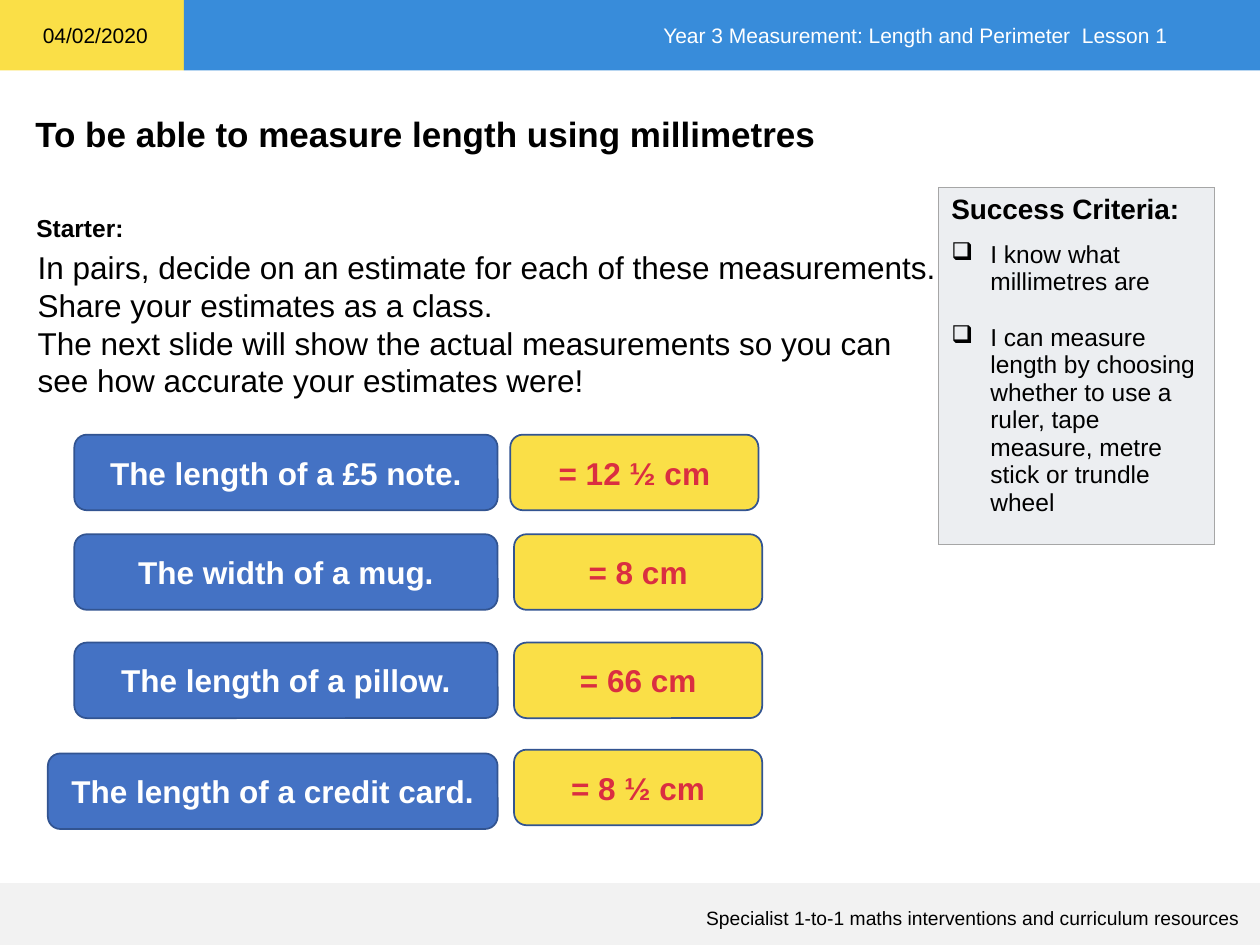
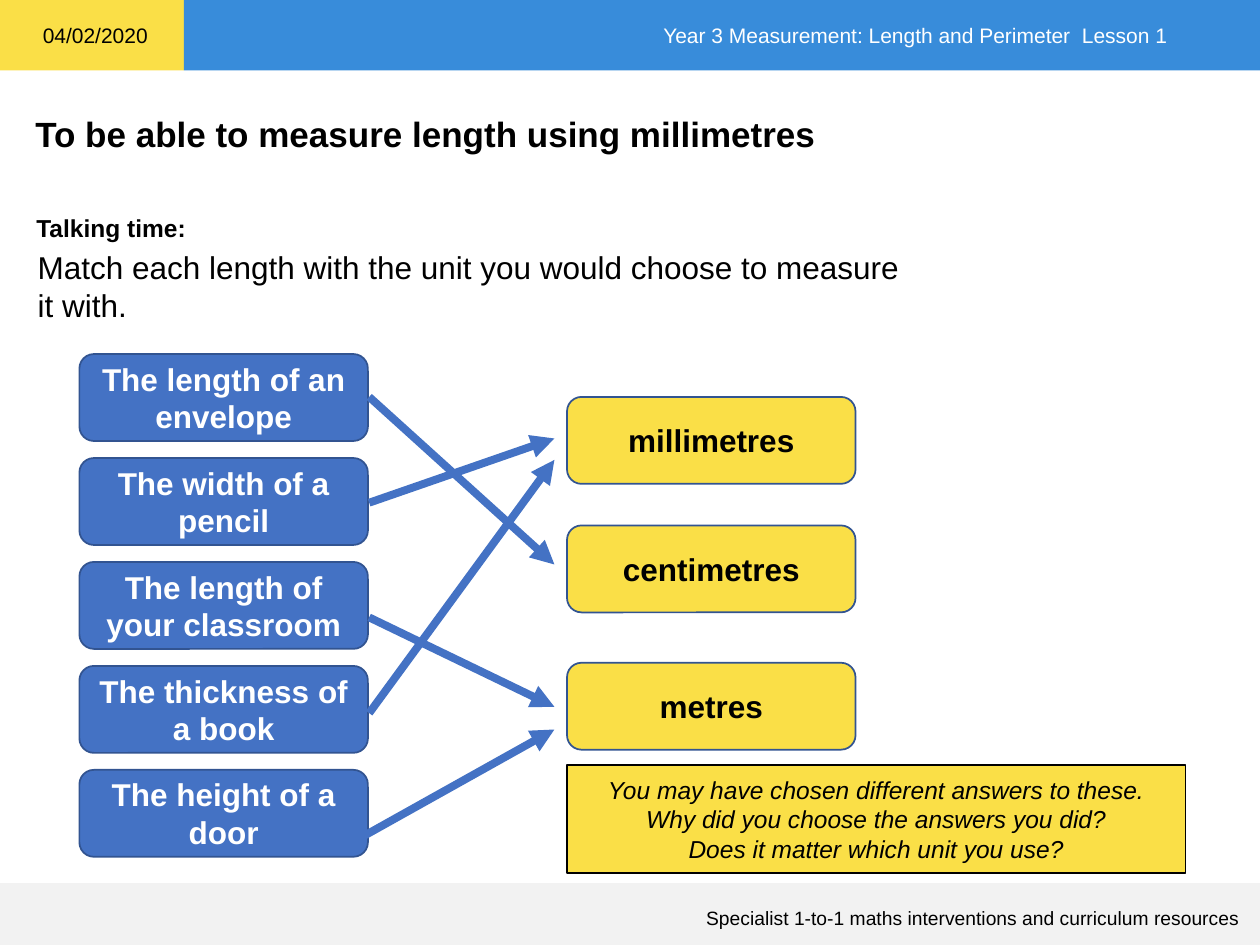
from lxml import etree
from pptx import Presentation
from pptx.dml.color import RGBColor
from pptx.enum import shapes, text
from pptx.oxml import ns
from pptx.util import Inches, Pt

COLOURS = {
    "yellow": "FADF47", "sky": "388CDA", "blue": "4472C4", "edge": "325491",
    "red": "DA2E41", "footer": "F2F2F2", "panel": "ECEEF1", "rule": "A6A6A6",
    "black": "000000", "white": "FFFFFF",
}
FONT = "Arial"
LESSON = "Year 3 Measurement: Length and Perimeter  Lesson 1"
TITLE = "To be able to measure length using millimetres"
FOOTER = "Specialist 1-to-1 maths interventions and curriculum resources"
LEFT, CENTRE, RIGHT = text.PP_ALIGN.LEFT, text.PP_ALIGN.CENTER, text.PP_ALIGN.RIGHT
MIDDLE, TOP = text.MSO_ANCHOR.MIDDLE, text.MSO_ANCHOR.TOP
RECT = shapes.MSO_SHAPE.RECTANGLE
ROUNDED = shapes.MSO_SHAPE.ROUNDED_RECTANGLE


def rgb(name):
    return RGBColor.from_string(COLOURS[name])


def inches(values):
    return [Inches(v) for v in values]


# Text
def format_run(r, size, colour="black", **styles):
    for name, value in {"name": FONT, "size": Pt(size), **styles}.items():
        setattr(r.font, name, value)
    r.font.color.rgb = rgb(colour)


def write(tf, lines, size, align=LEFT, anchor=TOP, margins=None, **styles):
    frame = {"word_wrap": True, "vertical_anchor": anchor,
             "auto_size": text.MSO_AUTO_SIZE.NONE}
    for side, value in (margins or {}).items():
        frame["margin_" + side] = Inches(value)
    for name, value in frame.items():
        setattr(tf, name, value)
    for i, line in enumerate(lines):
        p = tf.add_paragraph() if i else tf.paragraphs[0]
        p.alignment = align
        r = p.add_run()
        r.text = line
        format_run(r, size, **styles)


def add_text(s, at, lines, size, **styles):
    sp = s.shapes.add_textbox(*inches(at))
    write(sp.text_frame, lines, size, **styles)


# Shapes
def add_box(s, kind, at, fill, lines=(), size=18, line=None,
            align=CENTRE, **styles):
    sp = s.shapes.add_shape(kind, *inches(at))
    sp.shadow.inherit = False
    sp.fill.solid()
    sp.fill.fore_color.rgb = rgb(fill)
    if line:
        sp.line.color.rgb = rgb(line)
        sp.line.width = Pt(1)
    else:
        sp.line.fill.background()
    write(sp.text_frame, lines, size, align=align, anchor=MIDDLE, **styles)


def add_card(s, at, fill, label, colour):
    add_box(s, ROUNDED, at, fill, [label], line="edge", colour=colour, bold=True)


def add_arrow(s, start, end):
    cx = s.shapes.add_connector(shapes.MSO_CONNECTOR.STRAIGHT,
                                *inches(start + end))
    cx.line.color.rgb = rgb("blue")
    cx.line.width = Pt(4.5)
    etree.SubElement(cx.line._get_or_add_ln(), ns.qn("a:tailEnd"), type="triangle")
    etree.SubElement(cx._element.spPr, ns.qn("a:effectLst"))


# Success criteria table
def add_border(cell, colour, width):
    tc_pr = cell._tc.get_or_add_tcPr()
    for i, side in enumerate(("lnL", "lnR", "lnT", "lnB")):
        ln = etree.Element(ns.qn("a:" + side), w=str(Pt(width)))
        fill = etree.SubElement(ln, ns.qn("a:solidFill"))
        etree.SubElement(fill, ns.qn("a:srgbClr"), val=COLOURS[colour])
        tc_pr.insert(i, ln)


def add_criteria(s, at, heading, criteria):
    tbl = s.shapes.add_table(1, 1, *inches(at)).table
    cell = tbl.cell(0, 0)
    cell.fill.solid()
    cell.fill.fore_color.rgb = rgb("panel")
    add_border(cell, "rule", 0.75)
    tf = cell.text_frame
    r = tf.paragraphs[0].add_run()
    r.text = heading
    format_run(r, 16, bold=True)
    for i, criterion in enumerate(criteria):
        p = tf.add_paragraph()
        p_pr = p._p.get_or_add_pPr()
        p_pr.set("marL", str(Inches(0.31)))
        p_pr.set("indent", str(Inches(-0.31)))
        etree.SubElement(p_pr, ns.qn("a:buChar"), char="❑")
        p.space_before = Pt(16 if i else 9)
        r = p.add_run()
        r.text = criterion
        format_run(r, 14, bold=False)


# Parts shared by the slides
def add_lesson_slide(prs, activity, instructions):
    s = prs.slides.add_slide(prs.slide_layouts[5])
    add_box(s, RECT, (0, 0, 1.46, 0.56), "yellow", ["04/02/2020"], 12,
            align=LEFT, margins={"left": 0.34, "right": 0})
    add_box(s, RECT, (1.46, 0, 8.54, 0.56), "sky", [LESSON], 12,
            align=RIGHT, colour="white", margins={"right": 0.73})
    add_box(s, RECT, (0, 7.01, 10, 0.49), "footer", [FOOTER], 11,
            align=RIGHT, margins={"right": 0.16, "top": 0.06, "bottom": 0})
    title = s.shapes.title
    title.left, title.top, title.width, title.height = inches((0.18, 0.84, 9.77, 0.44))
    write(title.text_frame, [TITLE], 20, bold=True)
    add_text(s, (0.19, 1.64, 2, 0.34), [activity], 14, bold=True)
    add_text(s, (0.2, 1.92, 7.25, 0.1 + 0.3 * len(instructions)), instructions,
             18, margins={"right": 0})
    return s


def add_starter(prs):
    s = add_lesson_slide(prs, "Starter:", [
        "In pairs, decide on an estimate for each of these measurements.",
        "Share your estimates as a class.",
        "The next slide will show the actual measurements so you can",
        "see how accurate your estimates were!"])
    # object, its left and top, measurement, its left and top
    estimates = [
        ("The length of a £5 note.", 0.59, 3.45, "= 12 ½ cm", 4.05, 3.45),
        ("The width of a mug.", 0.59, 4.24, "= 8 cm", 4.08, 4.24),
        ("The length of a pillow.", 0.59, 5.1, "= 66 cm", 4.08, 5.1),
        ("The length of a credit card.", 0.38, 5.98, "= 8 ½ cm", 4.08, 5.95),
    ]
    for item, x, y, answer, answer_x, answer_y in estimates:
        add_card(s, (x, y, 3.95 - x, 0.6), "blue", item, "white")
        add_card(s, (answer_x, answer_y, 1.97, 0.6), "yellow", answer, "red")
    add_criteria(s, (7.45, 1.49, 2.19, 2.83), "Success Criteria:", [
        "I know what millimetres are",
        "I can measure length by choosing whether to use a ruler, tape "
        "measure, metre stick or trundle wheel"])


def add_talking_time(prs):
    s = add_lesson_slide(prs, "Talking time:", [
        "Match each length with the unit you would choose to measure",
        "it with."])
    # Lengths on the left, units on the right
    lengths = ["The length of an envelope", "The width of a pencil",
               "The length of your classroom", "The thickness of a book",
               "The height of a door"]
    for i, length in enumerate(lengths):
        add_card(s, (0.63, 2.81 + 0.825 * i, 2.29, 0.69), "blue", length, "white")
    units = {"millimetres": 3.15, "centimetres": 4.17, "metres": 5.26}
    for unit, y in units.items():
        add_card(s, (4.5, y, 2.29, 0.69), "yellow", unit, "black")
    # Matching arrows
    matches = [(2.93, 3.15, 4.48), (2.93, 3.99, 3.48), (2.93, 4.9, 5.61),
               (2.93, 5.66, 3.65), (2.86, 6.65, 5.79)]
    for x, y, unit_y in matches:
        add_arrow(s, (x, y), (4.4, unit_y))
    add_box(s, RECT, (4.5, 6.07, 4.91, 0.86), "yellow", [
        "You may have chosen different answers to these.",
        "Why did you choose the answers you did?",
        "Does it matter which unit you use?"], 14, line="black", italic=True)


def main():
    prs = Presentation()
    prs.slide_width, prs.slide_height = Inches(10), Inches(7.5)
    add_starter(prs)
    add_talking_time(prs)
    prs.save("out.pptx")


if __name__ == "__main__":
    main()
